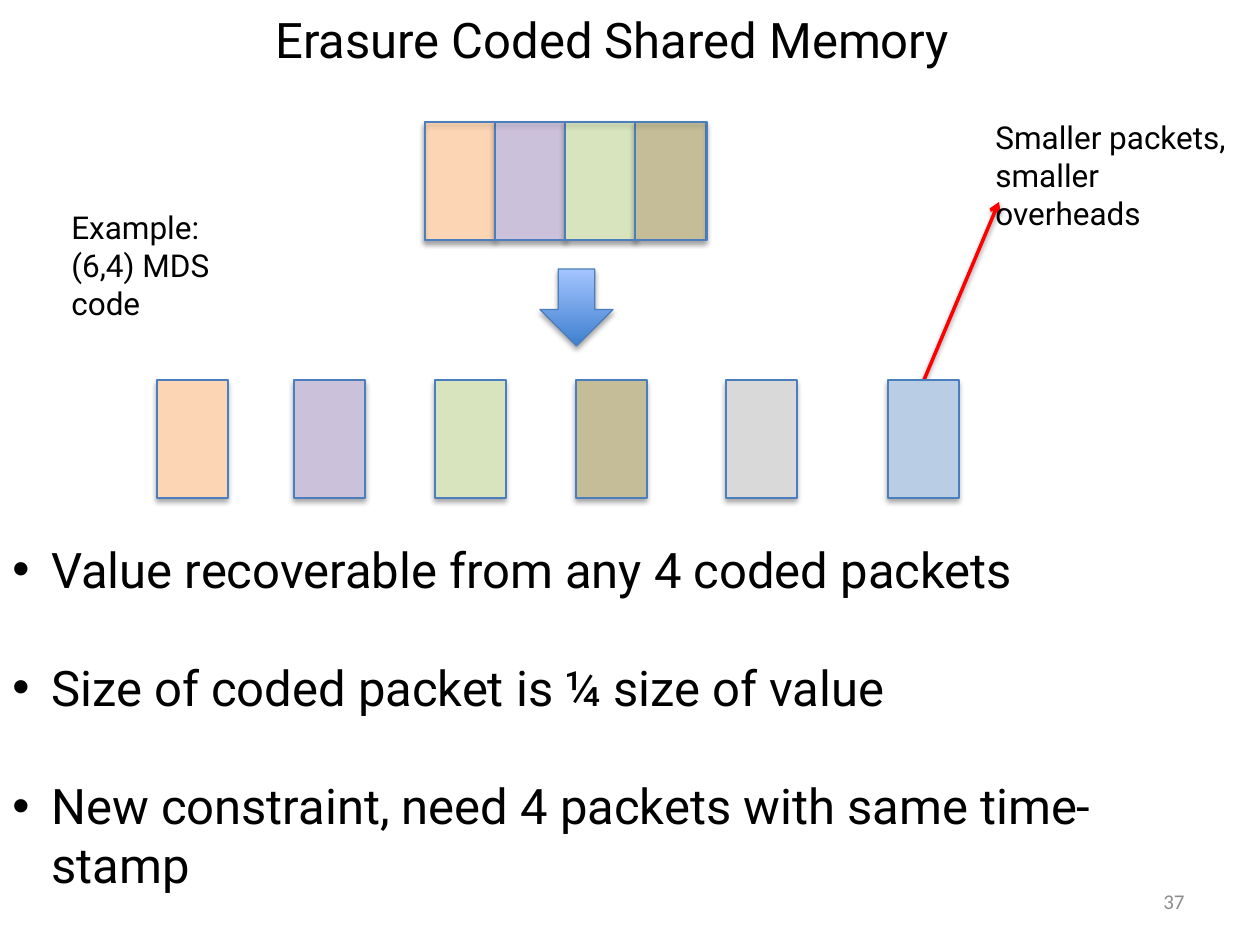
"""Builds the slide on erasure coded shared memory."""
from dataclasses import dataclass

from pptx import Presentation
from pptx import util as u
from pptx.dml.color import RGBColor
from pptx.enum import shapes, text
from pptx.oxml import parse_xml
from pptx.oxml.ns import nsdecls, qn

PX = u.Inches(1) / 126

BLACK = RGBColor(0x00, 0x00, 0x00)
GRAY_TEXT = RGBColor(0x8C, 0x8C, 0x8C)
RED = RGBColor(0xFF, 0x00, 0x00)
OUTLINE = RGBColor(0x4B, 0x7E, 0xBC)
PEACH = RGBColor(0xFC, 0xD5, 0xB5)
LILAC = RGBColor(0xCC, 0xC1, 0xDA)
GREEN = RGBColor(0xD7, 0xE4, 0xBD)
KHAKI = RGBColor(0xC4, 0xBD, 0x97)
SILVER = RGBColor(0xD9, 0xD9, 0xD9)
SKY = RGBColor(0xB9, 0xCD, 0xE5)
ARROW_DARK = RGBColor(0x3F, 0x80, 0xCE)
ARROW_LIGHT = RGBColor(0xA4, 0xC4, 0xFF)

PACKET_W, PACKET_H = 71, 118
VALUE_X, VALUE_Y, VALUE_STEP = 425, 122, 70
CODED_Y = 380


@dataclass(frozen=True)
class Packet:
    x: int
    color: RGBColor


@dataclass(frozen=True)
class Label:
    box: tuple[int, int, int, int]
    lines: tuple[str, ...]
    size: int = 18
    font: str = "Roboto"
    color: RGBColor = BLACK
    wrap: bool = True
    align: text.PP_ALIGN = text.PP_ALIGN.LEFT
    anchor: text.MSO_ANCHOR = text.MSO_ANCHOR.TOP
    bulleted: bool = False
    gap: int = 0


CODED = (
    Packet(157, PEACH),
    Packet(294, LILAC),
    Packet(435, GREEN),
    Packet(576, KHAKI),
    Packet(726, SILVER),
    Packet(888, SKY),
)

BULLETS = Label(
    (0, 533, 1236, 369),
    (
        "Value recoverable from any 4 coded packets",
        "Size of coded packet is ¼ size of value",
        "New constraint, need 4 packets with same time-stamp",
    ),
    size=28, bulleted=True, gap=34,
)
PAGE_NUMBER = Label(
    (904, 876, 293, 50), ("37",), size=12, font="Calibri", color=GRAY_TEXT,
    align=text.PP_ALIGN.RIGHT, anchor=text.MSO_ANCHOR.MIDDLE,
)
TITLE = Label((263, 3, 699, 72), ("Erasure Coded Shared Memory",), size=28, wrap=False)
CALLOUT = Label((983, 112, 274, 89), ("Smaller packets,", "smaller overheads"))
EXAMPLE = Label((59, 202, 239, 89), ("Example:", "(6,4) MDS code"), wrap=False)


def px(*lengths: int) -> list[int]:
    return [round(n * PX) for n in lengths]


def apply(target, formats: dict) -> None:
    for name, value in formats.items():
        setattr(target, name, value)


def add_shadow(sp, distance: float, opacity: int) -> None:
    sp._element.spPr.append(parse_xml(
        f'<a:effectLst {nsdecls("a")}>'
        f'<a:outerShdw blurRad="{u.Pt(3.1)}" dist="{u.Pt(distance)}" dir="5400000" rotWithShape="0">'
        f'<a:srgbClr val="000000"><a:alpha val="{opacity * 1000}"/></a:srgbClr>'
        '</a:outerShdw></a:effectLst>'
    ))


def add_bullet(p) -> None:
    pPr = p._p.get_or_add_pPr()
    indent = px(39)[0]
    pPr.set("marL", str(indent))
    pPr.set("indent", str(-indent))
    for tag in ('buFont typeface="Arial"', 'buChar char="•"'):
        pPr.append(parse_xml(f'<a:{tag} {nsdecls("a")}/>'))


def add_label(s, label: Label) -> None:
    tf = s.shapes.add_textbox(*px(*label.box)).text_frame
    apply(tf, {"word_wrap": label.wrap, "vertical_anchor": label.anchor})
    for i, line in enumerate(label.lines):
        p = tf.add_paragraph() if i else tf.paragraphs[0]
        apply(p, {"alignment": label.align, "space_before": u.Pt(label.gap if i else 0)})
        if label.bulleted:
            add_bullet(p)
        r = p.add_run()
        r.text = line
        apply(r.font, {"name": label.font, "size": u.Pt(label.size)})
        r.font.color.rgb = label.color


def add_block(s, kind, box: tuple[int, int, int, int], *colors: RGBColor) -> None:
    sp = s.shapes.add_shape(kind, *px(*box))
    if len(colors) > 1:
        sp.fill.gradient()
        sp.fill.gradient_angle = 90
        for stop, color in zip(sp.fill.gradient_stops, colors):
            stop.color.rgb = color
        apply(sp.fill.gradient_stops[0], {"position": 0})
        apply(sp.fill.gradient_stops[1], {"position": 1})
    elif colors:
        sp.fill.solid()
        sp.fill.fore_color.rgb = colors[0]
    else:
        sp.fill.background()
    sp.line.color.rgb = OUTLINE
    sp.line.width = u.Pt(0.75)
    add_shadow(sp, 1.8, 35)


def add_packet(s, packet: Packet, y: int) -> None:
    box = (packet.x, y, PACKET_W, PACKET_H)
    add_block(s, shapes.MSO_SHAPE.RECTANGLE, box, packet.color)


def add_pointer(s, start: tuple[int, int], end: tuple[int, int]) -> None:
    sp = s.shapes.add_connector(shapes.MSO_CONNECTOR.STRAIGHT, *px(*start, *end))
    sp.line.color.rgb = RED
    sp.line.width = u.Pt(2)
    ln = sp._element.spPr.find(qn("a:ln"))
    ln.append(parse_xml(f'<a:tailEnd {nsdecls("a")} type="arrow"/>'))
    add_shadow(sp, 1.6, 38)


def main() -> None:
    prs = Presentation()
    apply(prs, {"slide_width": u.Inches(10), "slide_height": u.Inches(7.5)})
    s = prs.slides.add_slide(prs.slide_layouts[6])

    for label in (BULLETS, PAGE_NUMBER, TITLE):
        add_label(s, label)
    add_pointer(s, (924, CODED_Y), (999, 202))
    add_label(s, CALLOUT)

    for packet in CODED:
        add_packet(s, packet, CODED_Y)
    for i, packet in enumerate(CODED[:4]):
        add_packet(s, Packet(VALUE_X + i * VALUE_STEP, packet.color), VALUE_Y)
    frame = (VALUE_X, VALUE_Y, 4 * VALUE_STEP + 2, PACKET_H)
    add_block(s, shapes.MSO_SHAPE.RECTANGLE, frame)
    add_block(s, shapes.MSO_SHAPE.DOWN_ARROW, (540, 269, 73, 77), ARROW_DARK, ARROW_LIGHT)
    add_label(s, EXAMPLE)

    prs.save("out.pptx")


if __name__ == "__main__":
    main()
